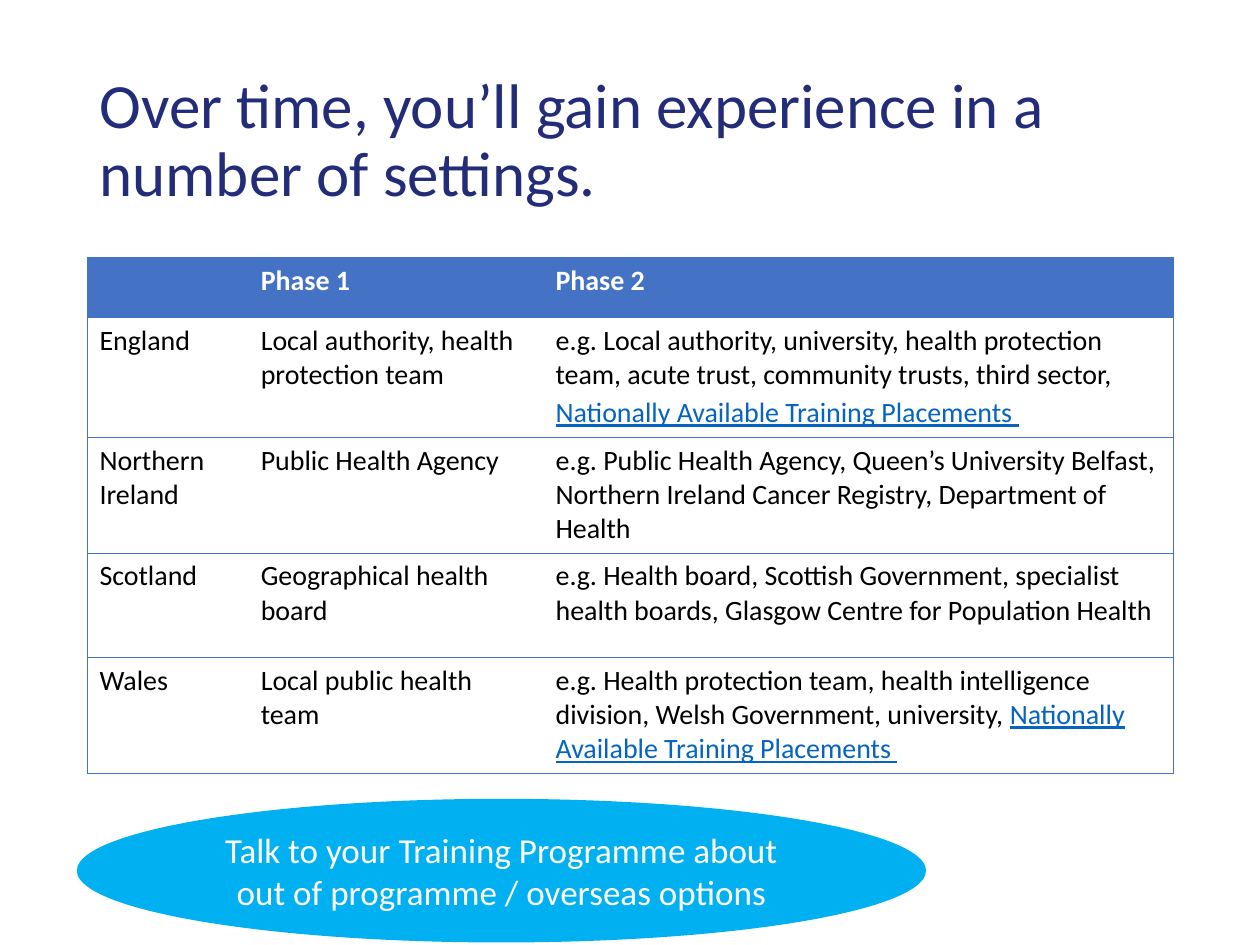
from lxml import etree
from pptx import Presentation
from pptx import util as u
from pptx.dml import color
from pptx.enum import shapes, text
from pptx.oxml import ns

COLORS = {
    "title": "232C79",
    "table": "4472C4",
    "link": "0563C1",
    "callout": "00B0F0",
    "black": "000000",
    "white": "FFFFFF",
}
PLACEMENTS = "Nationally Available Training Placements "
HEADINGS = ["", "Phase 1", "Phase 2"]
SETTINGS = [
    ["England", "Local authority, health protection team",
     "e.g. Local authority, university, health protection team, acute trust, "
     "community trusts, third sector, "],
    ["Northern Ireland", "Public Health Agency",
     "e.g. Public Health Agency, Queen’s University Belfast, Northern Ireland "
     "Cancer Registry, Department of Health"],
    ["Scotland", "Geographical health board",
     "e.g. Health board, Scottish Government, specialist health boards, "
     "Glasgow Centre for Population Health"],
    ["Wales", "Local public health team",
     "e.g. Health protection team, health intelligence division, "
     "Welsh Government, university, "],
]
COLUMN_WIDTHS = [1.28, 2.34, 5]
ROW_HEIGHTS = [0.48, 0.94, 0.92, 0.83, 0.92]


def rgb(name):
    return color.RGBColor.from_string(COLORS[name])


def set_values(target, values):
    for name, value in values.items():
        setattr(target, name, value)


def add_run(paragraph, words, size, color_name, **values):
    run = paragraph.add_run()
    run.text = words
    set_values(run.font, {"name": "Calibri", "size": u.Pt(size), **values})
    run.font.color.rgb = rgb(color_name)


def set_borders(cell, visible_sides):
    properties = cell._tc.get_or_add_tcPr()
    for side in "LRTB":
        line = etree.SubElement(properties, ns.qn(f"a:ln{side}"), w=str(u.Pt(0.5)))
        if side in visible_sides:
            fill = etree.SubElement(line, ns.qn("a:solidFill"))
            etree.SubElement(fill, ns.qn("a:srgbClr"), val=COLORS["table"])
        else:
            etree.SubElement(line, ns.qn("a:noFill"))


def add_title(slide, box):
    title = slide.shapes.title
    set_values(title, dict(zip(("left", "top", "width", "height"), box)))
    set_values(title.text_frame, {
        "word_wrap": True,
        "vertical_anchor": text.MSO_ANCHOR.MIDDLE,
        "auto_size": text.MSO_AUTO_SIZE.NONE,
    })
    paragraph = title.text_frame.paragraphs[0]
    set_values(paragraph, {"alignment": text.PP_ALIGN.LEFT, "line_spacing": 0.9})
    add_run(paragraph, "Over time, you’ll gain experience in a number of settings.",
            36, "title")


def add_settings_table(slide, box):
    rows = [HEADINGS] + SETTINGS
    table = slide.shapes.add_table(len(rows), len(HEADINGS), *box).table
    set_values(table, {"first_row": False, "horz_banding": False})
    for column, width in zip(table.columns, COLUMN_WIDTHS):
        column.width = u.Inches(width)
    for row, height in zip(table.rows, ROW_HEIGHTS):
        row.height = u.Inches(height)

    for row_index, words_in_row in enumerate(rows):
        is_heading = row_index == 0
        for column_index, words in enumerate(words_in_row):
            cell = table.cell(row_index, column_index)
            set_borders(cell, ("LTB", "TB", "RTB")[column_index])
            if is_heading:
                cell.fill.solid()
                cell.fill.fore_color.rgb = rgb("table")
            else:
                cell.fill.background()
            if words:
                add_run(cell.text_frame.paragraphs[0], words, 16,
                        "white" if is_heading else "black", bold=is_heading)

    for row_index in (1, 4):
        paragraph = table.cell(row_index, 2).text_frame.paragraphs[0]
        add_run(paragraph, PLACEMENTS, 16, "link", underline=True)
    add_run(table.cell(1, 2).text_frame.paragraphs[0], "\t", 18, "black")


def add_callout(slide, box):
    callout = slide.shapes.add_shape(shapes.MSO_SHAPE.OVAL, *box)
    callout.shadow.inherit = False
    callout.fill.solid()
    callout.fill.fore_color.rgb = rgb("callout")
    callout.line.fill.background()
    set_values(callout.text_frame, {
        "word_wrap": True,
        "vertical_anchor": text.MSO_ANCHOR.MIDDLE,
    })
    paragraph = callout.text_frame.paragraphs[0]
    paragraph.alignment = text.PP_ALIGN.CENTER
    add_run(paragraph,
            "Talk to your Training Programme about out of programme / overseas options",
            20, "white")


def main():
    presentation = Presentation()
    set_values(presentation, {"slide_width": u.Inches(10), "slide_height": u.Inches(7.5)})
    slide = presentation.slides.add_slide(presentation.slide_layouts[5])
    regions = [
        (add_title, (0.69, 0.4, 8.62, 1.45)),
        (add_settings_table, (0.69, 2.04, 8.62, sum(ROW_HEIGHTS))),
        (add_callout, (0.61, 6.34, 6.74, 1.14)),
    ]
    for add_region, box in regions:
        add_region(slide, [u.Inches(length) for length in box])
    presentation.save("out.pptx")


if __name__ == "__main__":
    main()
